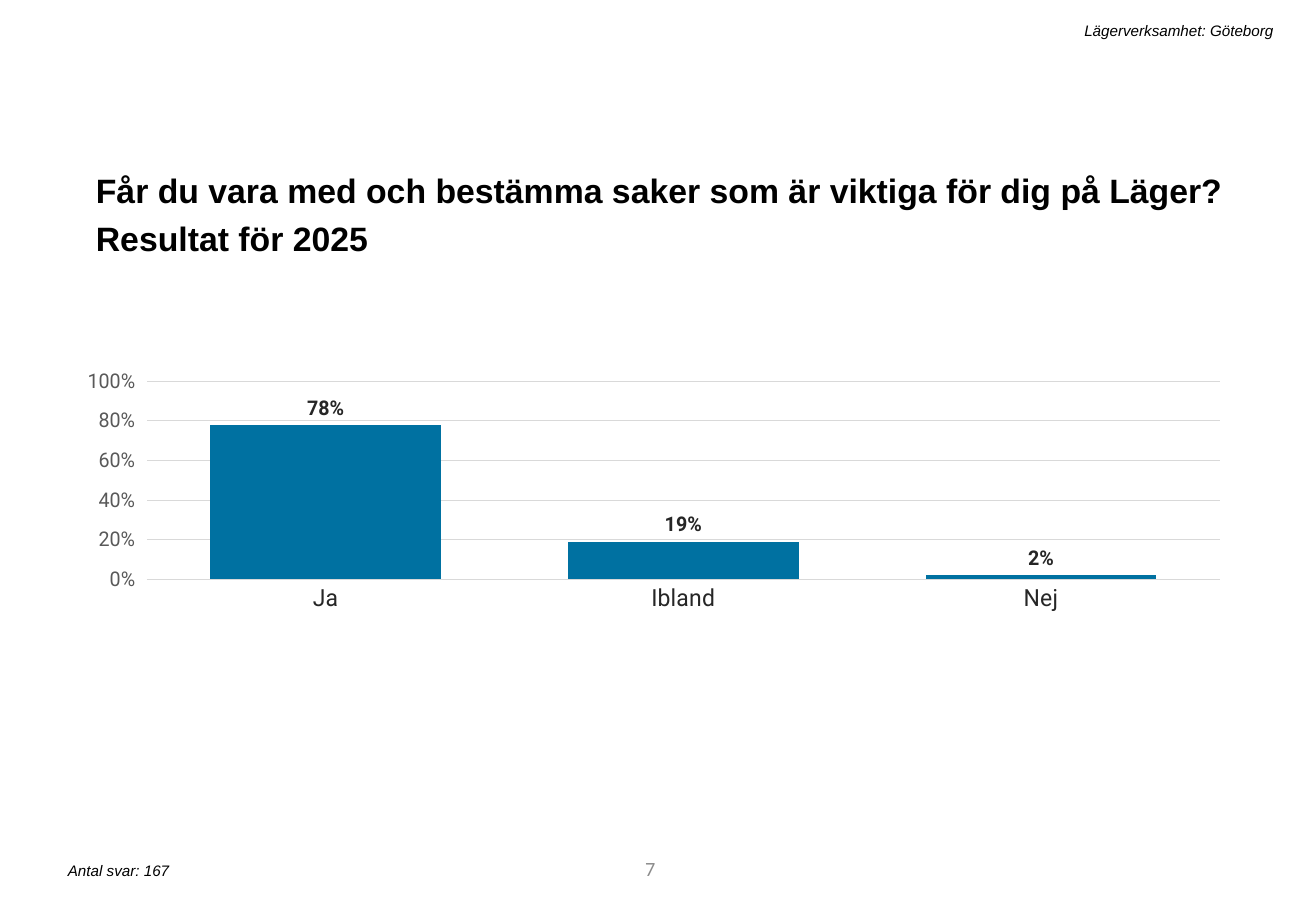
from lxml import etree
from pptx import Presentation
from pptx.chart.data import CategoryChartData
from pptx.dml.color import RGBColor
from pptx.enum.chart import XL_CHART_TYPE, XL_LABEL_POSITION, XL_TICK_MARK
from pptx.enum.text import MSO_ANCHOR, MSO_AUTO_SIZE, PP_ALIGN
from pptx.oxml.ns import qn
from pptx.util import Cm, Pt

COLUMN = XL_CHART_TYPE.COLUMN_CLUSTERED
OUTSIDE = XL_LABEL_POSITION.OUTSIDE_END
TICK_NONE, TICK_OUT = XL_TICK_MARK.NONE, XL_TICK_MARK.OUTSIDE
LEFT, RIGHT = PP_ALIGN.LEFT, PP_ALIGN.RIGHT
TOP, MIDDLE = MSO_ANCHOR.TOP, MSO_ANCHOR.MIDDLE
NO_FIT = MSO_AUTO_SIZE.NONE

BLACK, DARK, GREY, PALE = "000000", "262626", "595959", "8C8C8C"
GRID, BLUE = "D9D9D9", "0071A1"
ANSWERS = {"Ja": 0.78, "Ibland": 0.19, "Nej": 0.02}
PLOT = {"x": 0.025, "y": 0.154, "w": 0.966, "h": 0.413}


def rgb(color):
    return RGBColor.from_string(color)


def style(font, size, color, name="Arial", bold=False, italic=False):
    font.size, font.name = Pt(size), name
    font.bold, font.italic = bold, italic
    font.color.rgb = rgb(color)


def fill_text(shape, text, size, color, align=LEFT, anchor=TOP, **look):
    frame = shape.text_frame
    frame.text = text
    frame.word_wrap = True
    frame.auto_size = NO_FIT
    frame.vertical_anchor = anchor
    para = frame.paragraphs[0]
    para.alignment = align
    style(para.runs[0].font, size, color, **look)
    return para


def add_title(slide, text):
    title = slide.shapes.title
    title.left, title.top = Cm(1.75), Cm(3.25)
    title.width, title.height = Cm(24.79), Cm(2.21)
    para = fill_text(title, text, 20, BLACK, bold=True)
    para.line_spacing = 1.2
    para.space_before = Pt(10)


def add_note(slide, text, box, size=9, color=BLACK, **look):
    shape = slide.shapes.add_textbox(*map(Cm, box))
    fill_text(shape, text, size, color, **look)


def set_line(line, color):
    line.color.rgb = rgb(color)
    line.width = Pt(0.75)


def place_plot(chart):
    area = chart._chartSpace.find(".//" + qn("c:plotArea"))
    for old in area.findall(qn("c:layout")):
        area.remove(old)
    layout = etree.Element(qn("c:layout"))
    area.insert(0, layout)
    manual = etree.SubElement(layout, qn("c:manualLayout"))
    parts = {"layoutTarget": "inner", "xMode": "edge", "yMode": "edge", **PLOT}
    for tag, value in parts.items():
        etree.SubElement(manual, qn("c:" + tag)).set("val", str(value))


def add_bars(slide, answers, box):
    data = CategoryChartData(number_format="0%")
    data.categories = list(answers)
    data.add_series("Series 1", list(answers.values()))
    chart = slide.shapes.add_chart(COLUMN, *map(Cm, box), data).chart
    chart.has_legend = chart.has_title = False
    style(chart.font, 10, BLACK, "Roboto")
    place_plot(chart)

    # Axes
    cats, vals = chart.category_axis, chart.value_axis
    cats.major_tick_mark = TICK_NONE
    style(cats.tick_labels.font, 14, DARK, "Roboto")
    set_line(cats.format.line, GRID)
    vals.minimum_scale, vals.maximum_scale, vals.major_unit = 0, 1, 0.2
    vals.major_tick_mark = TICK_OUT
    vals.format.line.fill.background()
    set_line(vals.major_gridlines.format.line, GRID)
    vals.tick_labels.number_format = "0%"
    vals.tick_labels.number_format_is_linked = False
    style(vals.tick_labels.font, 12, GREY, "Roboto")

    # Bars and their labels
    plot = chart.plots[0]
    plot.gap_width = 55
    plot.vary_by_categories = False
    series = plot.series[0]
    series.format.fill.solid()
    series.format.fill.fore_color.rgb = rgb(BLUE)
    labels = series.data_labels
    labels.show_value = True
    labels.position = OUTSIDE
    labels.number_format = "0%"
    labels.number_format_is_linked = False
    style(labels.font, 12, DARK, "Roboto", bold=True)


def main():
    deck = Presentation()
    deck.slide_width, deck.slide_height = Cm(27.51), Cm(19.05)
    slide = deck.slides.add_slide(deck.slide_layouts[5])

    # Question and result
    add_title(slide, "Får du vara med och bestämma saker som är viktiga "
                     "för dig på Läger? Resultat för 2025")
    add_bars(slide, ANSWERS, (1.83, 6.43, 23.88, 10.03))

    # Header and footer
    add_note(slide, "Lägerverksamhet: Göteborg", (4.37, 0.33, 22.5, 0.64),
             align=RIGHT, italic=True)
    add_note(slide, "Antal svar: 167", (1.17, 17.88, 11.2, 0.64), italic=True)
    add_note(slide, "7", (7.75, 17.65, 6.2, 1.02), 12, PALE,
             align=RIGHT, anchor=MIDDLE, name="Calibri")

    deck.save("out.pptx")


if __name__ == "__main__":
    main()
